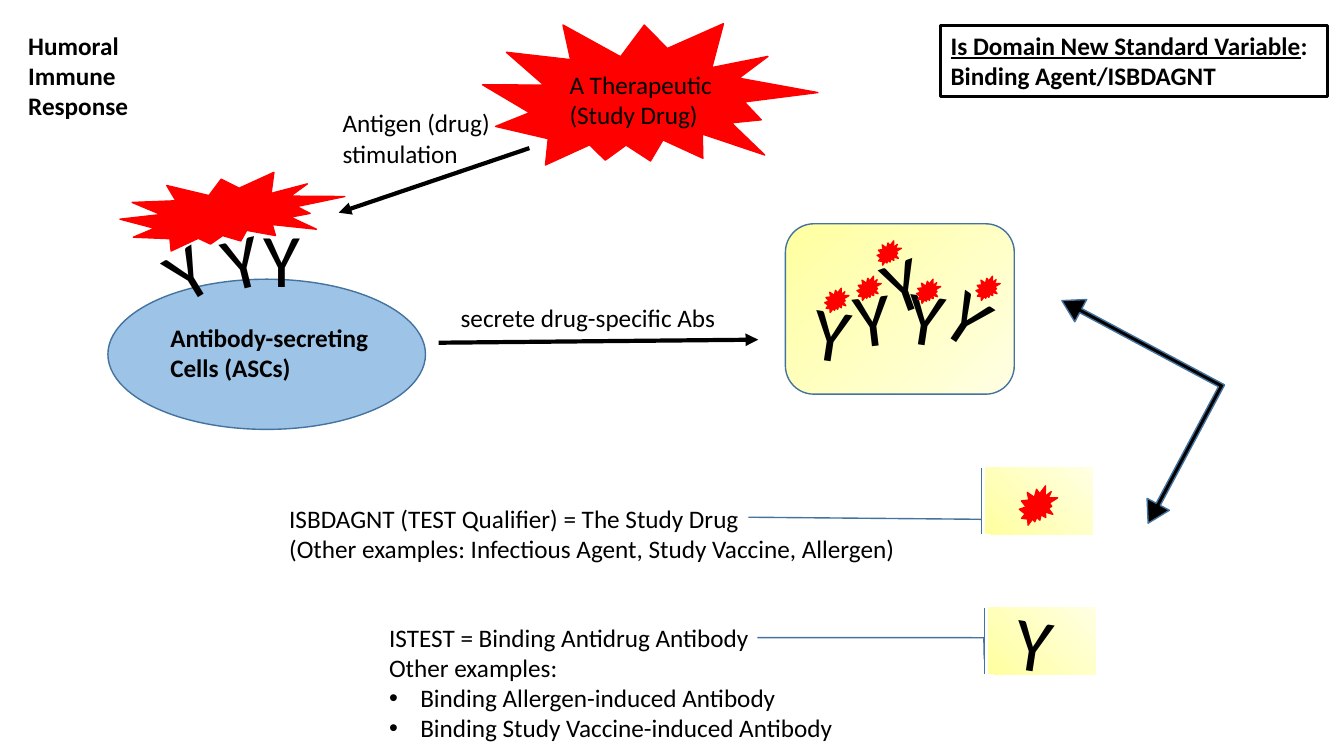
import lxml.etree
import pptx
import pptx.dml.color
import pptx.enum.shapes
import pptx.enum.text
import pptx.oxml.ns
import pptx.util

Inches = pptx.util.Inches
Pt = pptx.util.Pt
SHAPE = pptx.enum.shapes.MSO_SHAPE
ALIGN = pptx.enum.text.PP_ALIGN
BLACK = pptx.dml.color.RGBColor(0x00, 0x00, 0x00)
RED = pptx.dml.color.RGBColor(0xFF, 0x00, 0x00)
CELL_BLUE = pptx.dml.color.RGBColor(0x9D, 0xC3, 0xE6)
OUTLINE_BLUE = pptx.dml.color.RGBColor(0x43, 0x73, 0x9E)
YELLOW = pptx.dml.color.RGBColor(0xFF, 0xFF, 0xA0)
PALE_YELLOW = pptx.dml.color.RGBColor(0xFF, 0xFF, 0xE3)
FONT = "Calibri"


def add_sub(parent, tag, **attributes):
    return lxml.etree.SubElement(parent, pptx.oxml.ns.qn(tag), **attributes)


def write(frame, lines, size=18, bold=False, align=ALIGN.LEFT):
    frame.word_wrap = True
    frame.vertical_anchor = pptx.enum.text.MSO_ANCHOR.TOP
    frame.auto_size = pptx.enum.text.MSO_AUTO_SIZE.SHAPE_TO_FIT_TEXT
    frame.text = "\n".join(lines)
    for paragraph in frame.paragraphs:
        paragraph.alignment = align
        for run in paragraph.runs:
            run.font.name = FONT
            run.font.size = Pt(size)
            run.font.bold = bold
            run.font.color.rgb = BLACK


def add_text(slide, box, *lines, **style):
    label = slide.shapes.add_textbox(*map(Inches, box))
    write(label.text_frame, lines, **style)
    return label


def add_figure(slide, kind, box, fill, line=OUTLINE_BLUE, rotation=0, adjustments=()):
    figure = slide.shapes.add_shape(kind, *map(Inches, box))
    figure.shadow.inherit = False
    figure.rotation = rotation
    for index, value in enumerate(adjustments):
        figure.adjustments[index] = value
    figure.fill.solid()
    figure.fill.fore_color.rgb = fill
    figure.line.color.rgb = line
    figure.line.width = Pt(1)
    return figure


def shade_yellow(figure, angle):
    figure.fill.gradient()
    figure.fill.gradient_angle = angle
    for stop, color, position in zip(figure.fill.gradient_stops, (YELLOW, PALE_YELLOW), (0, 1)):
        stop.color.rgb = color
        stop.position = position


def add_callout(slide, left, top, adjustments):
    callout = add_figure(slide, SHAPE.LINE_CALLOUT_2_ACCENT_BAR, (left, top, 1.07, 0.66),
                         YELLOW, adjustments=adjustments)
    shade_yellow(callout, 45)


def add_antigen(slide, left, top, width=0.24, height=0.24, rotation=0):
    add_figure(slide, SHAPE.EXPLOSION2, (left, top, width, height), RED, RED, rotation)


def add_antibody(slide, left, top, rotation=0, width=0.7):
    antibody = add_text(slide, (left, top, width, 1.01), "Y", size=54, align=ALIGN.CENTER)
    antibody.rotation = rotation


def add_arrow(slide, start, end):
    arrow = slide.shapes.add_connector(pptx.enum.shapes.MSO_CONNECTOR.STRAIGHT,
                                       *map(Inches, start + end))
    arrow.line.color.rgb = BLACK
    arrow.line.width = Pt(3)
    add_sub(arrow.line._get_or_add_ln(), "a:tailEnd", type="triangle")
    add_sub(arrow._element.spPr, "a:effectLst")


def add_bullet(paragraph):
    properties = paragraph._p.get_or_add_pPr()
    indent = Inches(0.31)
    properties.set("marL", str(indent))
    properties.set("indent", str(-indent))
    add_sub(properties, "a:buFont", typeface="Arial")
    add_sub(properties, "a:buChar", char="•")


def add_heading(slide):
    heading = slide.shapes.title
    heading.left, heading.top, heading.width, heading.height = map(
        Inches, (0.18, 0.25, 1.41, 1.01))
    write(heading.text_frame, ["Humoral Immune Response"], bold=True)


def add_secreting_cells(slide):
    add_figure(slide, SHAPE.OVAL, (1.07, 2.77, 3.15, 1.49), CELL_BLUE)
    add_text(slide, (1.59, 3.15, 2.18, 0.71), "Antibody-secreting Cells (ASCs)", bold=True)
    for left, top, rotation, width in ((2.45, 2.05, 0, 0.7), (1.46, 2.18, 328.7, 0.77),
                                       (2.04, 2.07, 346.1, 0.7)):
        add_antibody(slide, left, top, rotation, width)
    add_antigen(slide, 1.19, 1.71, 2.23, 0.78)


def add_stimulation(slide):
    add_antigen(slide, 4.79, 0.12, 3.29, 1.68, 9.7)
    add_text(slide, (5.55, 0.64, 1.89, 0.71), "A Therapeutic (Study Drug)")
    add_arrow(slide, (5.25, 1.47), (3.36, 2.11))
    add_text(slide, (3.3, 1.02, 2.24, 0.71), "Antigen (drug) stimulation")


def add_bound_antibodies(slide):
    panel = add_figure(slide, SHAPE.ROUNDED_RECTANGLE, (7.79, 2.22, 2.27, 1.69), YELLOW)
    shade_yellow(panel, 315)
    for left, top, rotation, width in ((9.27, 2.63, 33.8, 0.7), (8.84, 2.63, 8.6, 0.7),
                                       (8.59, 2.3, 340.1, 0.7), (8.3, 2.64, 353.1, 0.7),
                                       (7.87, 2.79, 8.6, 0.77)):
        add_antibody(slide, left, top, rotation, width)
    for left, top in ((8.18, 2.86), (8.5, 2.74), (9.68, 2.74), (9.09, 2.77), (8.7, 2.39)):
        add_antigen(slide, left, top)
    add_arrow(slide, (4.35, 3.4), (7.52, 3.37))
    add_text(slide, (4.47, 2.95, 2.89, 0.4), "secrete drug-specific Abs")


def add_standard_variable(slide):
    variable = add_text(slide, (9.33, 0.25, 3.84, 0.71), "Is Domain New Standard Variable",
                        "Binding Agent/ISBDAGNT", bold=True)
    variable.line.color.rgb = BLACK
    variable.line.width = Pt(2.25)
    name = variable.text_frame.paragraphs[0]
    name.runs[0].font.underline = True
    colon = name.add_run()
    colon.text = ":"
    colon.font.name = FONT
    colon.font.size = Pt(18)
    colon.font.bold = True
    colon.font.color.rgb = BLACK


def add_legend(slide):
    add_callout(slide, 9.8, 6.03, (0.778, -0.035, 0.45, -0.039, 0.449, -2.138))
    add_callout(slide, 9.77, 4.64, (0.778, -0.035, 0.776, -0.057, 0.745, -2.193))
    test = add_text(slide, (3.76, 6.12, 5.79, 1.31), "ISTEST = Binding Antidrug Antibody",
                    "Other examples:", "Binding Allergen-induced Antibody",
                    "Binding Study Vaccine-induced Antibody")
    for example in test.text_frame.paragraphs[2:]:
        add_bullet(example)
    add_antibody(slide, 9.87, 5.86, 8.6, 0.77)
    add_antigen(slide, 10.11, 4.82, 0.38, 0.39)
    add_text(slide, (2.77, 4.94, 6.64, 0.71), "ISBDAGNT (TEST Qualifier) = The Study Drug",
             "(Other examples: Infectious Agent, Study Vaccine, Allergen)")
    add_figure(slide, SHAPE.LEFT_UP_ARROW, (10.21, 3.1, 1.67, 1.92), BLACK,
               rotation=298.1, adjustments=(0.027, 0.075, 0.127))


def main():
    deck = pptx.Presentation()
    deck.slide_width = Inches(13.33)
    deck.slide_height = Inches(7.5)
    slide = deck.slides.add_slide(deck.slide_layouts[5])
    add_heading(slide)
    add_secreting_cells(slide)
    add_stimulation(slide)
    add_bound_antibodies(slide)
    add_standard_variable(slide)
    add_legend(slide)
    deck.save("out.pptx")


if __name__ == "__main__":
    main()
